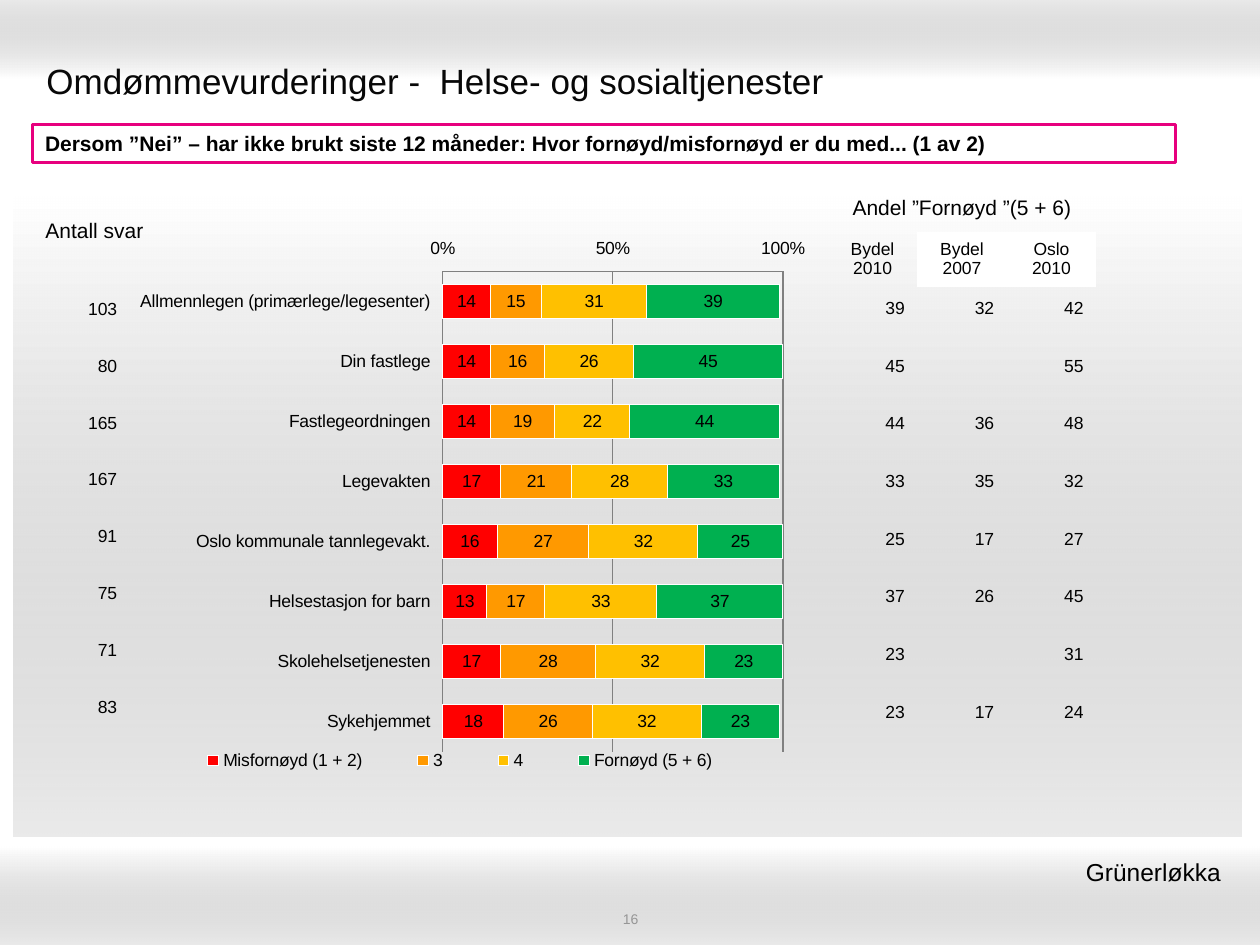
from dataclasses import dataclass
from typing import Optional

from lxml import etree
from pptx import Presentation
from pptx.chart.data import CategoryChartData
from pptx.dml.color import RGBColor
from pptx.enum.chart import (XL_CHART_TYPE, XL_LEGEND_POSITION as LEGEND,
                             XL_TICK_LABEL_POSITION as LABEL_POS, XL_TICK_MARK as TICK)
from pptx.enum.shapes import MSO_SHAPE
from pptx.enum.text import MSO_ANCHOR as ANCHOR, PP_ALIGN as ALIGN
from pptx.oxml import parse_xml
from pptx.oxml.ns import nsdecls, qn
from pptx.util import Inches, Pt

WHITE = RGBColor(0xFF, 0xFF, 0xFF)
BLACK = RGBColor(0, 0, 0)
TITLE_INK = RGBColor(0x08, 0x08, 0x08)
GREY = RGBColor(0x99, 0x99, 0x99)
NUMBER_GREY = RGBColor(0x96, 0x96, 0x96)
AXIS_GREY = RGBColor(0x80, 0x80, 0x80)
PINK = RGBColor(0xE7, 0x00, 0x7E)
RED = RGBColor(0xFF, 0x00, 0x00)
ORANGE = RGBColor(0xFF, 0x99, 0x00)
YELLOW = RGBColor(0xFF, 0xC0, 0x00)
GREEN = RGBColor(0x00, 0xB0, 0x50)
PLAIN_TABLE = "{2D5ABB26-0587-4C30-8999-92F81FD0307C}"


@dataclass
class Box:
    x: float
    y: float
    w: float
    h: float

    def emu(self) -> tuple:
        return tuple(Inches(v) for v in (self.x, self.y, self.w, self.h))


@dataclass
class Band:
    box: Box
    angle: int  # counter-clockwise, from white to grey


@dataclass
class Label:
    box: Box
    text: str
    size: int
    color: RGBColor = BLACK
    align: ALIGN = ALIGN.LEFT
    anchor: ANCHOR = ANCHOR.TOP
    bold: bool = False
    margins: tuple = (0.1, 0.05, 0.1, 0.05)  # left, top, right, bottom


@dataclass
class Series:
    name: str
    values: tuple
    color: RGBColor


BANDS = [Band(Box(0, 0, 10, 0.62), 90),
         Band(Box(0, 6.72, 10, 0.78), 270),
         Band(Box(0.11, 1.56, 9.74, 5.08), 270)]

TITLE = Label(Box(0.27, 0.36, 9.45, 0.55), "Omdømmevurderinger -  Helse- og sosialtjenester",
              20, TITLE_INK, anchor=ANCHOR.MIDDLE)
PAGE = Label(Box(3.42, 7.22, 3.17, 0.14), "16", 8, NUMBER_GREY, ALIGN.CENTER,
             ANCHOR.MIDDLE, margins=(0, 0, 0, 0))
DISTRICT = Label(Box(6.1, 6.75, 3.74, 0.34), "Grünerløkka", 14, align=ALIGN.RIGHT,
                 margins=(0.1, 0.05, 0.15, 0.05))
QUESTION = Label(Box(0.26, 0.99, 9.07, 0.3),
                 "Dersom ”Nei” – har ikke brukt siste 12 måneder: "
                 "Hvor fornøyd/misfornøyd er du med... (1 av 2)", 12, bold=True)

SERVICES = ["Allmennlegen (primærlege/legesenter)", "Din fastlege", "Fastlegeordningen",
            "Legevakten", "Oslo kommunale tannlegevakt.", "Helsestasjon for barn",
            "Skolehelsetjenesten", "Sykehjemmet"]
SERIES = [Series("Misfornøyd (1 + 2)", (14, 14, 14, 17, 16, 13, 17, 18), RED),
          Series("3", (15, 16, 19, 21, 27, 17, 28, 26), ORANGE),
          Series("4", (31, 26, 22, 28, 32, 33, 32, 32), YELLOW),
          Series("Fornøyd (5 + 6)", (39, 45, 44, 33, 25, 37, 23, 23), GREEN)]

ANSWERS = [103, 80, 165, 167, 91, 75, 71, 83]
SATISFIED = [(39, 32, 42), (45, "", 55), (44, 36, 48), (33, 35, 32),
             (25, 17, 27), (37, 26, 45), (23, "", 31), (23, 17, 24)]
HEADS = ["Bydel\n2010", "Bydel\n2007", "Oslo\n2010"]


def set_font(font, size: int, color: RGBColor, bold: bool = False) -> None:
    for name, value in {"name": "Arial", "size": Pt(size), "bold": bold}.items():
        setattr(font, name, value)
    font.color.rgb = color


def write(tf, text, size: int, color: RGBColor, align: ALIGN, bold: bool = False) -> None:
    tf.text = str(text)
    for p in tf.paragraphs:
        p.alignment = align
        set_font(p.font, size, color, bold)
        for r in p.runs:
            set_font(r.font, size, color, bold)


def fill_text(sp, label: Label) -> None:
    tf = sp.text_frame
    left, top, right, bottom = (Inches(m) for m in label.margins)
    frame = {"word_wrap": True, "vertical_anchor": label.anchor, "margin_left": left,
             "margin_top": top, "margin_right": right, "margin_bottom": bottom}
    for name, value in frame.items():
        setattr(tf, name, value)
    write(tf, label.text, label.size, label.color, label.align, label.bold)


def add_rect(s, box: Box):
    sp = s.shapes.add_shape(MSO_SHAPE.RECTANGLE, *box.emu())
    sp.shadow.inherit = False
    return sp


def add_band(s, band: Band) -> None:
    sp = add_rect(s, band.box)
    sp.line.fill.background()
    sp.fill.gradient()
    sp.fill.gradient_angle = band.angle
    for stop, color, position in zip(sp.fill.gradient_stops, (WHITE, GREY), (0, 1)):
        stop.color.rgb = color
        stop.position = position
    grey = list(sp.fill._xPr.iter(qn("a:srgbClr")))[-1]
    etree.SubElement(grey, qn("a:alpha")).set("val", "20000")


def add_table(s, box: Box, rows: list, size: int, align: ALIGN,
              heights: Optional[list] = None):
    tbl = s.shapes.add_table(len(rows), len(rows[0]), *box.emu()).table
    tbl.first_row = tbl.horz_banding = False
    tbl._tbl.tblPr.find(qn("a:tableStyleId")).text = PLAIN_TABLE
    for row, height in zip(tbl.rows, heights or [box.h / len(rows)] * len(rows)):
        row.height = Inches(height)
    for i, values in enumerate(rows):
        for j, value in enumerate(values):
            cell = tbl.cell(i, j)
            cell.fill.background()
            cell.vertical_anchor = ANCHOR.MIDDLE
            write(cell.text_frame, value, size, BLACK, align)
    return tbl


def set_layout(element, before: str, box: Box, inner: bool = False) -> None:
    """Place a chart part by fractions of the chart's size."""
    for old in element.findall(qn("c:layout")):
        element.remove(old)
    target = '<c:layoutTarget val="inner"/>' if inner else ""
    sizes = "".join(f'<c:{k} val="{getattr(box, k)}"/>' for k in ("x", "y", "w", "h"))
    layout = parse_xml(f'<c:layout {nsdecls("c")}><c:manualLayout>{target}<c:xMode val="edge"/>'
                       f'<c:yMode val="edge"/>{sizes}</c:manualLayout></c:layout>')
    element.find(qn(before)).addprevious(layout)


def add_bars(s, box: Box) -> None:
    data = CategoryChartData(number_format="0")
    data.categories = SERVICES
    for item in SERIES:
        data.add_series(item.name, item.values)
    chart = s.shapes.add_chart(XL_CHART_TYPE.BAR_STACKED, *box.emu(), data).chart
    set_font(chart.font, 10, BLACK)
    chart.has_title = False

    # Bars and their values
    plot = chart.plots[0]
    plot.gap_width, plot.overlap, plot.vary_by_categories = 75, 100, False
    for ser, item in zip(plot.series, SERIES):
        ser.format.fill.solid()
        ser.format.fill.fore_color.rgb = item.color
        ser.format.line.color.rgb = WHITE
        labels = ser.data_labels
        labels.show_value = True
        labels.number_format, labels.number_format_is_linked = "0", False
        set_font(labels.font, 10, BLACK)

    # Axes
    cat, val = chart.category_axis, chart.value_axis
    cat.reverse_order = True
    cat.major_tick_mark = TICK.NONE
    scale = {"minimum_scale": 0, "maximum_scale": 100, "major_unit": 50,
             "major_tick_mark": TICK.INSIDE, "has_major_gridlines": True}
    for name, value in scale.items():
        setattr(val, name, value)
    val.tick_labels.number_format = "General\\%"
    val.tick_labels.number_format_is_linked = False
    val.major_gridlines.format.line.color.rgb = AXIS_GREY
    for axis in (cat, val):
        axis.tick_label_position = LABEL_POS.LOW
        axis.format.line.color.rgb = AXIS_GREY

    # Legend and plot positions
    chart.has_legend = True
    legend = chart.legend
    legend.position, legend.include_in_layout = LEGEND.BOTTOM, False
    set_font(legend.font, 10, BLACK)
    set_layout(legend._element, "c:overlay", Box(0.05, 0.91, 0.87, 0.05))
    set_layout(chart._chartSpace.chart.plotArea, "c:barChart",
               Box(0.46, 0.08, 0.49, 0.84), inner=True)


def main() -> None:
    prs = Presentation()
    prs.slide_width, prs.slide_height = Inches(10), Inches(7.5)
    s = prs.slides.add_slide(prs.slide_layouts[6])

    # Background bands and texts
    for band in BANDS:
        add_band(s, band)
    for label in (TITLE, PAGE, DISTRICT):
        fill_text(s.shapes.add_textbox(*label.box.emu()), label)

    # Question frame
    frame = add_rect(s, QUESTION.box)
    frame.fill.solid()
    frame.fill.fore_color.rgb = WHITE
    frame.line.color.rgb = PINK
    frame.line.width = Pt(2)
    fill_text(frame, QUESTION)

    add_bars(s, Box(0.98, 1.79, 5.51, 4.54))

    # Share of satisfied, with its header
    add_table(s, Box(6.57, 2.22, 2.13, 3.66), SATISFIED, 10, ALIGN.RIGHT)
    head = add_table(s, Box(6.57, 1.47, 2.13, 0.8), [[""] * 3, HEADS], 10, ALIGN.CENTER,
                     [0.37, 0.39])
    head.cell(0, 0).merge(head.cell(0, 2))
    write(head.cell(0, 0).text_frame, "Andel ”Fornøyd ”(5 + 6)", 12, BLACK, ALIGN.CENTER)
    for col in (1, 2):
        head.cell(1, col).fill.solid()
        head.cell(1, col).fill.fore_color.rgb = WHITE

    # Number of answers
    add_table(s, Box(0.51, 2.23, 0.52, 3.61), [[n] for n in ANSWERS], 10, ALIGN.RIGHT)
    add_table(s, Box(0.04, 1.54, 1.42, 0.59), [["Antall svar"]], 12, ALIGN.CENTER)

    prs.save("out.pptx")


if __name__ == "__main__":
    main()
